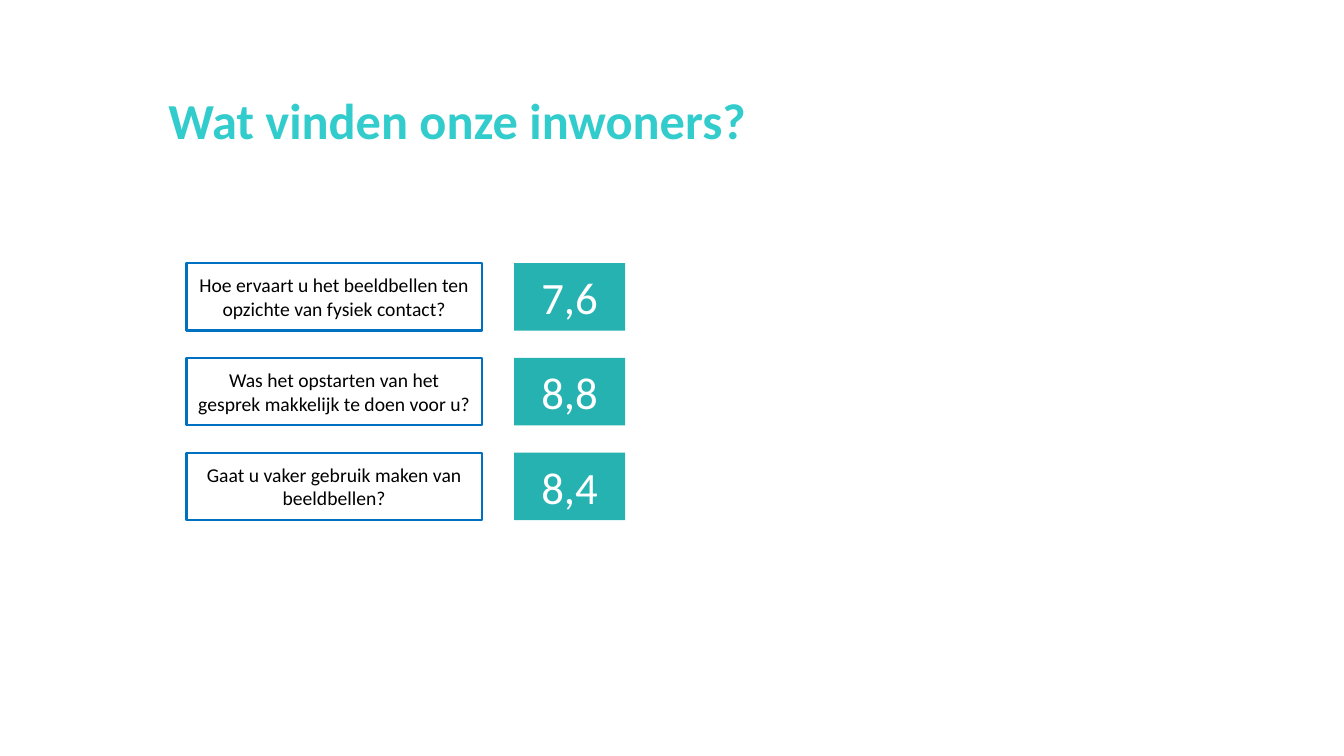
"""Build the slide with residents' ratings of video calling."""
from dataclasses import dataclass

from pptx import Presentation
from pptx import util as u
from pptx.dml.color import RGBColor
from pptx.enum import shapes, text


@dataclass(frozen=True)
class Theme:
    """Colours, font and type sizes of the slide."""
    font: str = "Calibri"
    title_colour: str = "33CCCC"
    question_line: str = "0070C0"
    question_text: str = "000000"
    score_fill: str = "27B2B2"
    score_text: str = "FFFFFF"
    title_size: int = 36
    question_size: int = 14
    score_size: int = 32


THEME = Theme()
RATINGS = [
    ("Hoe ervaart u het beeldbellen ten opzichte van fysiek contact?", "7,6"),
    ("Was het opstarten van het gesprek makkelijk te doen voor u?", "8,8"),
    ("Gaat u vaker gebruik maken van beeldbellen?", "8,4"),
]


def add_run(paragraph, words, size, colour, bold=False):
    """Add one formatted run to the paragraph."""
    run = paragraph.add_run()
    run.text = words
    run.font.name = THEME.font
    run.font.size = u.Pt(size)
    run.font.bold = bold
    run.font.color.rgb = RGBColor.from_string(colour)


def add_title(slide, left, top, width, height, words):
    """Place the title placeholder in the given box."""
    title = slide.shapes.title
    title.left, title.top = u.Inches(left), u.Inches(top)
    title.width, title.height = u.Inches(width), u.Inches(height)
    frame = title.text_frame
    frame.word_wrap = True
    frame.auto_size = text.MSO_AUTO_SIZE.NONE
    frame.vertical_anchor = text.MSO_ANCHOR.TOP
    frame.margin_left = frame.margin_right = 0
    frame.margin_top = frame.margin_bottom = 0
    paragraph = frame.paragraphs[0]
    paragraph.alignment = text.PP_ALIGN.LEFT
    paragraph.line_spacing = 0.9
    add_run(paragraph, words, THEME.title_size, THEME.title_colour, bold=True)


def add_box(slide, left, top, width, height, words, size, colour):
    """Add an unfilled, unlined rectangle with centred text."""
    shape = slide.shapes.add_shape(
        shapes.MSO_SHAPE.RECTANGLE,
        u.Inches(left), u.Inches(top), u.Inches(width), u.Inches(height))
    shape.shadow.inherit = False
    shape.fill.background()
    shape.line.fill.background()
    frame = shape.text_frame
    frame.word_wrap = True
    frame.vertical_anchor = text.MSO_ANCHOR.MIDDLE
    paragraph = frame.paragraphs[0]
    paragraph.alignment = text.PP_ALIGN.CENTER
    add_run(paragraph, words, size, colour)
    return shape


def add_ratings(slide, left, top, width, height, ratings):
    """Stack rows of a question and its score within the given box."""
    row_height, score_width, column_gap = 0.67, 1.1, 0.32
    question_width = width - score_width - column_gap
    score_left = left + width - score_width
    pitch = (height - row_height) / (len(ratings) - 1)
    for index, (question, score) in enumerate(ratings):
        row_top = top + index * pitch
        question_box = add_box(slide, left, row_top, question_width, row_height,
                               question, THEME.question_size, THEME.question_text)
        question_box.line.color.rgb = RGBColor.from_string(THEME.question_line)
        question_box.line.width = u.Pt(1.5)
        score_box = add_box(slide, score_left, row_top, score_width, row_height,
                            score, THEME.score_size, THEME.score_text)
        score_box.fill.solid()
        score_box.fill.fore_color.rgb = RGBColor.from_string(THEME.score_fill)


def main():
    """Create and save the presentation."""
    presentation = Presentation()
    presentation.slide_width = u.Inches(13.33)
    presentation.slide_height = u.Inches(7.5)
    slide = presentation.slides.add_slide(presentation.slide_layouts[5])
    add_title(slide, 1.67, 0.95, 8.46, 1.29, "Wat vinden onze inwoners?")
    add_ratings(slide, 1.85, 2.61, 4.35, 2.55, RATINGS)
    presentation.save("out.pptx")


if __name__ == "__main__":
    main()
